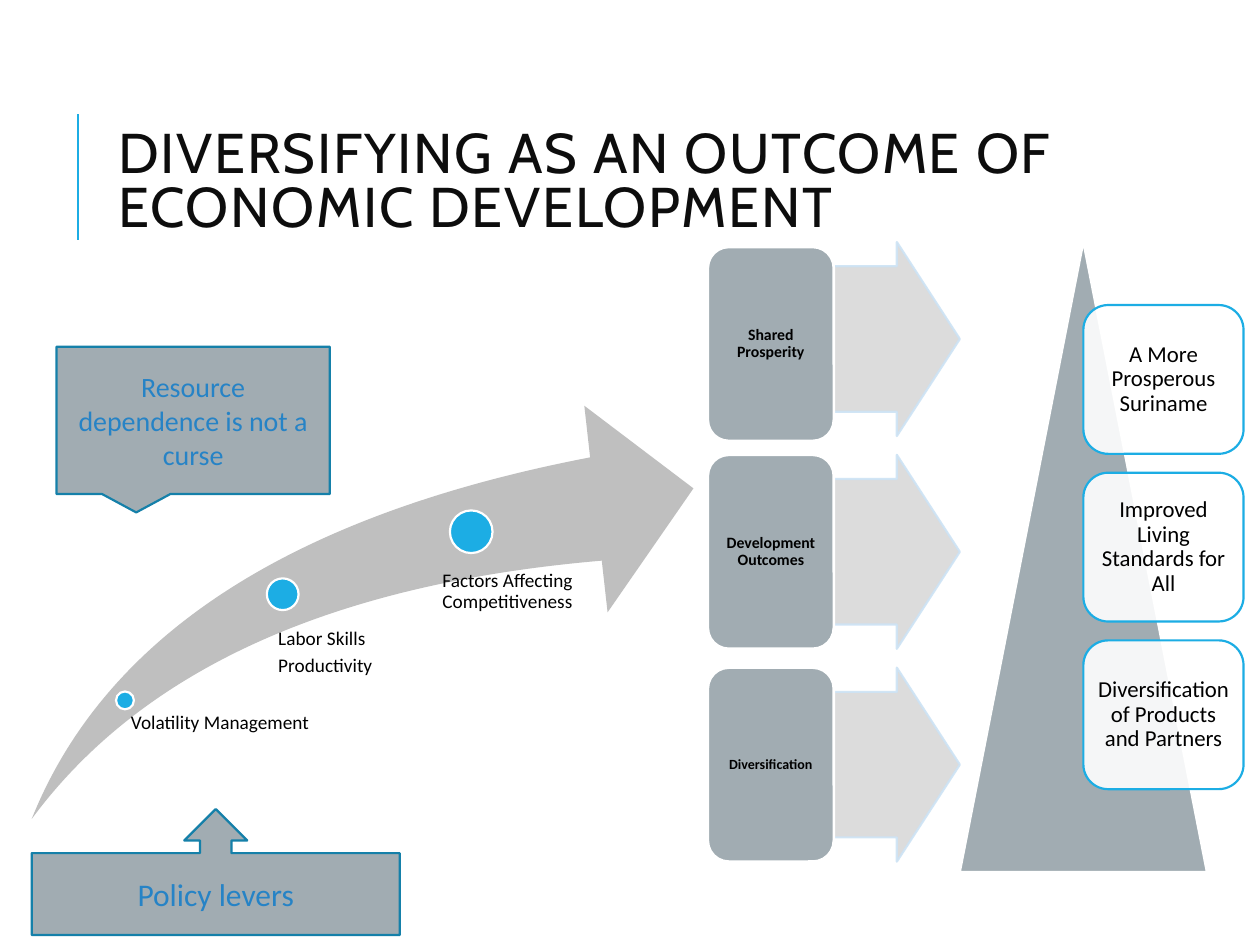
import pptx
import pptx.util
import pptx.dml.color
import pptx.enum.shapes
import pptx.enum.text
import pptx.oxml.ns
import lxml.etree
from dataclasses import dataclass

Cm, Pt = pptx.util.Cm, pptx.util.Pt
SHAPE = pptx.enum.shapes.MSO_SHAPE
ALIGN = pptx.enum.text.PP_ALIGN
ANCHOR = pptx.enum.text.MSO_ANCHOR
qn = pptx.oxml.ns.qn


@dataclass
class Theme:
    title_font: str = "Cabin"
    body_font: str = "Calibri"
    ink: str = "0D0D0D"
    black: str = "000000"
    white: str = "FFFFFF"
    accent: str = "1CADE4"
    accent_dark: str = "1580A9"
    callout_ink: str = "2683C6"
    slate: str = "A1ACB2"
    swoosh: str = "BFBFBF"
    arrow: str = "D9D9D9"
    arrow_edge: str = "CDE3F5"
    title_size: float = 32
    policy_size: float = 18
    callout_size: float = 16
    card_size: float = 13
    step_size: float = 11
    outcome_size: float = 9
    small_size: float = 8
    edge: float = 1.25


def rgb(value):
    return pptx.dml.color.RGBColor.from_string(value)


def set_alpha(fill_parent, percent):
    """Make the solid fill below this element partly transparent."""
    color = fill_parent.find(qn("a:solidFill"))[0]
    lxml.etree.SubElement(color, qn("a:alpha")).set("val", str(percent * 1000))


def write(frame, text, *, font, size, color, bold=False, align=ALIGN.LEFT,
          anchor=ANCHOR.TOP, line=1.0, after=0, margins=None, tracking=0):
    """Fill a text frame; each line of the text becomes a paragraph."""
    frame.word_wrap = True
    frame.auto_size = pptx.enum.text.MSO_AUTO_SIZE.NONE
    frame.vertical_anchor = anchor
    if margins:
        (frame.margin_left, frame.margin_top,
         frame.margin_right, frame.margin_bottom) = map(Cm, margins)
    frame.text = text
    for paragraph in frame.paragraphs:
        paragraph.alignment = align
        paragraph.line_spacing = line
        paragraph.space_after = Pt(after)
        for run in paragraph.runs:
            run.font.name, run.font.size = font, Pt(size)
            run.font.bold = bold
            run.font.color.rgb = rgb(color)
            if tracking:
                run.font._element.set("spc", str(tracking * 100))


class SlideBuilder:
    def __init__(self, theme, slide):
        self.theme = theme
        self.slide = slide

    def title(self, text, box):
        holder = self.slide.shapes.title
        holder.left, holder.top, holder.width, holder.height = map(Cm, box)
        write(holder.text_frame, text, font=self.theme.title_font,
              size=self.theme.title_size, color=self.theme.ink,
              anchor=ANCHOR.MIDDLE, line=0.8, tracking=1)

    def rule(self, x1, y1, x2, y2):
        rule = self.slide.shapes.add_connector(
            pptx.enum.shapes.MSO_CONNECTOR.STRAIGHT, *map(Cm, (x1, y1, x2, y2)))
        rule.line.color.rgb = rgb(self.theme.accent)
        rule.line.width = Pt(1.5)
        lxml.etree.SubElement(rule._element.spPr, qn("a:effectLst"))

    def shape(self, kind, box, fill, edge=None, width=None, alpha=None):
        shape = self.slide.shapes.add_shape(kind, *map(Cm, box))
        shape.shadow.inherit = False
        shape.fill.solid()
        shape.fill.fore_color.rgb = rgb(fill)
        if alpha:
            set_alpha(shape._element.spPr, alpha)
        if edge:
            shape.line.color.rgb = rgb(edge)
            shape.line.width = Pt(width or self.theme.edge)
        else:
            shape.line.fill.background()
        return shape

    def panel(self, kind, box, text, fill, edge, size, color,
              width=None, alpha=None, **style):
        """A shape with centred text."""
        panel = self.shape(kind, box, fill, edge, width, alpha)
        write(panel.text_frame, text, font=self.theme.body_font, size=size,
              color=color, align=ALIGN.CENTER, anchor=ANCHOR.MIDDLE, **style)

    def label(self, text, box, indent):
        label = self.slide.shapes.add_textbox(*map(Cm, box))
        write(label.text_frame, text, font=self.theme.body_font,
              size=self.theme.step_size, color=self.theme.black,
              line=0.9, after=4, margins=(indent, 0, 0, 0))


def main():
    deck = pptx.Presentation()
    deck.slide_width, deck.slide_height = Cm(25.4), Cm(19.05)
    theme = Theme()
    page = SlideBuilder(theme, deck.slides.add_slide(deck.slide_layouts[5]))

    # Heading
    page.rule(1.57, 4.83, 1.57, 2.29)
    page.title("DIVERSIFYING AS AN OUTCOME OF ECONOMIC DEVELOPMENT",
               (2.13, 1.63, 20.24, 4.17))

    # Rising path with its three steps
    path_arrow = page.shape(SHAPE.SWOOSH_ARROW, (0.64, 8.18, 13.34, 8.33), theme.swoosh)
    path_arrow.adjustments[0] = path_arrow.adjustments[1] = 0.25
    steps = [
        ("Volatility Management", (2.34, 13.94, 0.36), (2.46, 14.38, 5.87, 2.41), 0.18),
        ("Labor Skills\nProductivity", (5.38, 11.66, 0.64), (5.28, 12.67, 3.2, 1.52), 0.33),
        ("Factors Affecting Competitiveness", (9.07, 10.29, 0.86),
         (8.46, 11.51, 5.05, 2.13), 0.46),
    ]
    for text, (x, y, diameter), box, indent in steps:
        page.shape(SHAPE.OVAL, (x, y, diameter, diameter), theme.accent, theme.white)
        page.label(text, box, indent)

    # Outcomes, each with an arrow to the goals
    outcomes = [
        ("Shared Prosperity", 4.98, theme.outcome_size),
        ("Development Outcomes", 9.17, theme.outcome_size),
        ("Diversification", 13.46, theme.small_size),
    ]
    for row, (text, top, size) in enumerate(outcomes):
        arrow = page.shape(SHAPE.RIGHT_ARROW, (16.81, 4.88 + 4.29 * row, 2.54, 3.91),
                           theme.arrow, theme.arrow_edge, alpha=90)
        arrow.adjustments[0], arrow.adjustments[1] = 0.75, 0.5
        set_alpha(arrow.line._get_or_add_ln(), 90)
        page.panel(SHAPE.ROUNDED_RECTANGLE, (14.27, top, 2.54, 3.91), text,
                   theme.slate, theme.white, size, theme.black, width=1.5,
                   bold=True, line=0.9, margins=(0.09, 0.05, 0.09, 0.05))

    # Pyramid of goals
    page.shape(SHAPE.ISOSCELES_TRIANGLE, (19.35, 4.88, 4.98, 12.7),
               theme.slate, theme.white)
    goals = ["A More Prosperous Suriname", "Improved Living Standards for All",
             "Diversification of Products and Partners"]
    for row, goal in enumerate(goals):
        page.panel(SHAPE.ROUNDED_RECTANGLE, (21.84, 6.15 + 3.38 * row, 3.23, 3),
                   goal, theme.white, theme.accent, theme.card_size, theme.black,
                   alpha=90, line=0.9, margins=(0.13,) * 4)

    # Callouts
    page.panel(SHAPE.RECTANGULAR_CALLOUT, (1.14, 6.99, 5.51, 2.97),
               "Resource dependence is not a curse", theme.slate,
               theme.accent_dark, theme.callout_size, theme.callout_ink)
    page.panel(SHAPE.UP_ARROW_CALLOUT, (0.64, 16.31, 7.42, 2.54), "Policy levers",
               theme.slate, theme.accent_dark, theme.policy_size, theme.callout_ink)

    deck.save("out.pptx")


if __name__ == "__main__":
    main()
